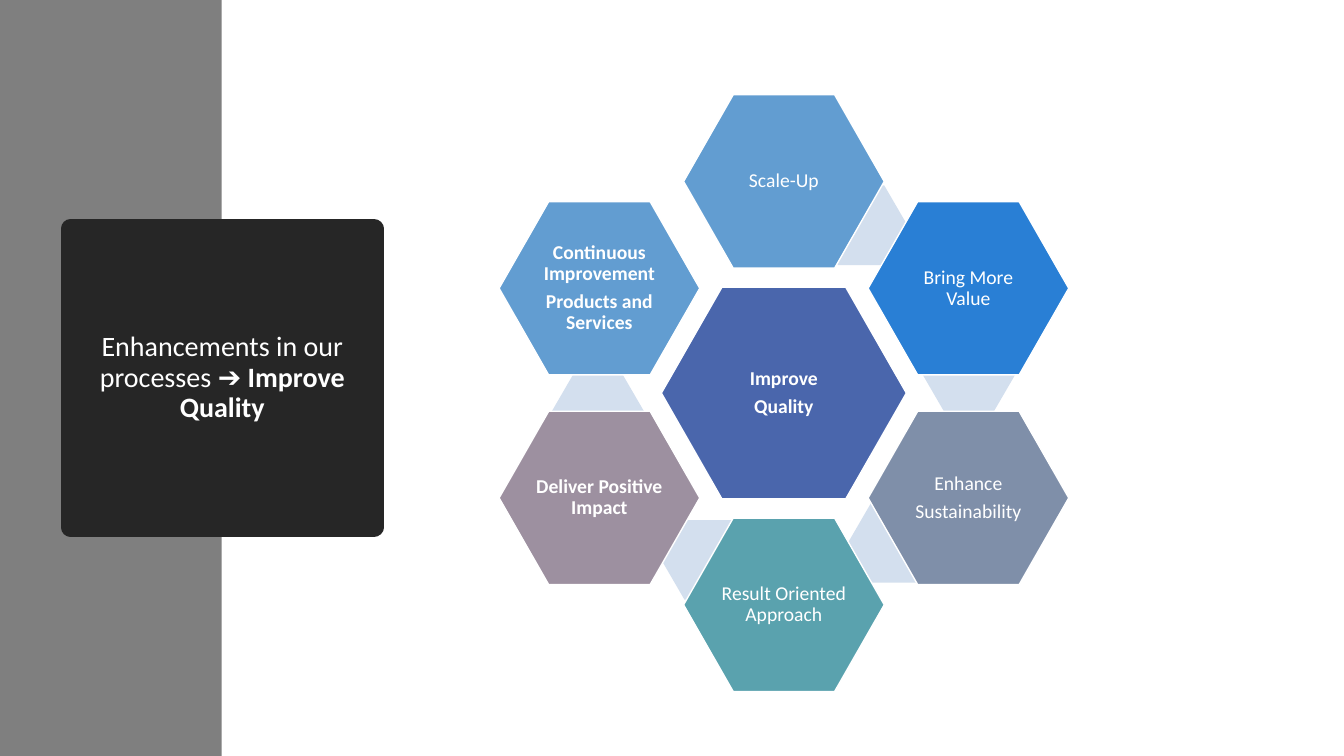
from dataclasses import dataclass

from lxml import etree
from pptx import Presentation
from pptx.dml.color import RGBColor
from pptx.enum.shapes import MSO_SHAPE
from pptx.enum.text import MSO_ANCHOR, MSO_AUTO_SIZE, PP_ALIGN
from pptx.oxml.ns import qn
from pptx.util import Emu, Pt

RECTANGLE, HEXAGON = MSO_SHAPE.RECTANGLE, MSO_SHAPE.HEXAGON
CENTER, MIDDLE, NO_FIT = PP_ALIGN.CENTER, MSO_ANCHOR.MIDDLE, MSO_AUTO_SIZE.NONE
EMU_PER_PX = 9144
FONT = "Calibri"
TITLE_ONLY = 5
TILE_WIDTH, TILE_HEIGHT = 199, 172
LINK_WIDTH, LINK_HEIGHT = 92, 79
LEFT, MIDDLE_X, RIGHT = (495 + 183 * column for column in range(3))
COLORS = {
    "white": "FFFFFF",
    "gray": "7F7F7F",
    "black": "262626",
    "indigo": "4A66AC",
    "sky": "629DD1",
    "blue": "297FD5",
    "slate": "7F8FA9",
    "teal": "5AA2AE",
    "mauve": "9D90A0",
    "pale": "D3DFEE",
}


@dataclass(frozen=True)
class Tile:
    x: int
    y: int
    color: str
    lines: tuple[str, ...]
    bold: bool = False
    link: tuple[int, int] | None = None
    width: int = TILE_WIDTH
    height: int = TILE_HEIGHT


TILES = (
    Tile(656, 285, "indigo", ("Improve", "Quality"), True, width=243, height=210),
    Tile(MIDDLE_X, 94, "sky", ("Scale-Up",), link=(808, 184)),
    Tile(RIGHT, 200, "blue", ("Bring More Value",), link=(915, 332)),
    Tile(RIGHT, 408, "slate", ("Enhance", "Sustainability"), link=(841, 499)),
    Tile(MIDDLE_X, 514, "teal", ("Result Oriented Approach",), link=(656, 516)),
    Tile(LEFT, 408, "mauve", ("Deliver Positive Impact",), True, (547, 369)),
    Tile(LEFT, 200, "sky", ("Continuous Improvement", "Products and Services"), True),
)


def px(length: int) -> Emu:
    return Emu(length * EMU_PER_PX)


def rgb(name: str) -> RGBColor:
    return RGBColor.from_string(COLORS[name])


def add_block(page, kind, x: int, y: int, width: int, height: int, color: str):
    block = page.shapes.add_shape(kind, px(x), px(y), px(width), px(height))
    block.shadow.inherit = False
    block.fill.solid()
    block.fill.fore_color.rgb = rgb(color)
    block.line.fill.background()
    return block


def add_span(para, text: str, size: int, bold: bool) -> None:
    span = para.add_run()
    span.text = text
    span.font.name = FONT
    span.font.size = Pt(size)
    span.font.bold = bold
    span.font.color.rgb = rgb("white")


def center_text(frame) -> None:
    frame.word_wrap = True
    frame.auto_size = NO_FIT
    frame.vertical_anchor = MIDDLE


def add_tile(page, tile: Tile) -> None:
    if tile.link:
        link = add_block(page, HEXAGON, *tile.link, LINK_WIDTH, LINK_HEIGHT, "pale")
        link.adjustments[0] = 0.29
    box = add_block(page, HEXAGON, tile.x, tile.y, tile.width, tile.height, tile.color)
    box.adjustments[0] = 0.286
    box.line.color.rgb = rgb("white")
    box.line.width = Pt(1)
    frame = box.text_frame
    center_text(frame)
    frame.margin_left = frame.margin_right = px(2)
    frame.margin_top = frame.margin_bottom = px(2)
    for index, line in enumerate(tile.lines):
        para = frame.add_paragraph() if index else frame.paragraphs[0]
        para.alignment = CENTER
        para.line_spacing = 0.9
        para.space_after = Pt(5)
        add_span(para, line, 14, tile.bold)


def format_title(title) -> None:
    title.left, title.top, title.width, title.height = map(px, (70, 227, 301, 296))
    title.fill.solid()
    title.fill.fore_color.rgb = rgb("black")
    title.line.color.rgb = rgb("black")
    title.line.width = Pt(13.75)
    etree.SubElement(title.element.spPr.get_or_add_ln(), qn("a:round"))
    center_text(title.text_frame)
    para = title.text_frame.paragraphs[0]
    para.alignment = CENTER
    para.line_spacing = 0.9
    add_span(para, "Enhancements in our processes ➔ ", 20, False)
    add_span(para, "Improve Quality", 20, True)


def main() -> None:
    deck = Presentation()
    deck.slide_width, deck.slide_height = px(1333), px(750)
    page = deck.slides.add_slide(deck.slide_layouts[TITLE_ONLY])
    title = page.shapes.title
    format_title(title)
    sidebar = add_block(page, RECTANGLE, 0, 0, 220, 750, "gray")
    title.element.addprevious(sidebar.element)
    for tile in TILES:
        add_tile(page, tile)
    deck.save("out.pptx")


if __name__ == "__main__":
    main()
